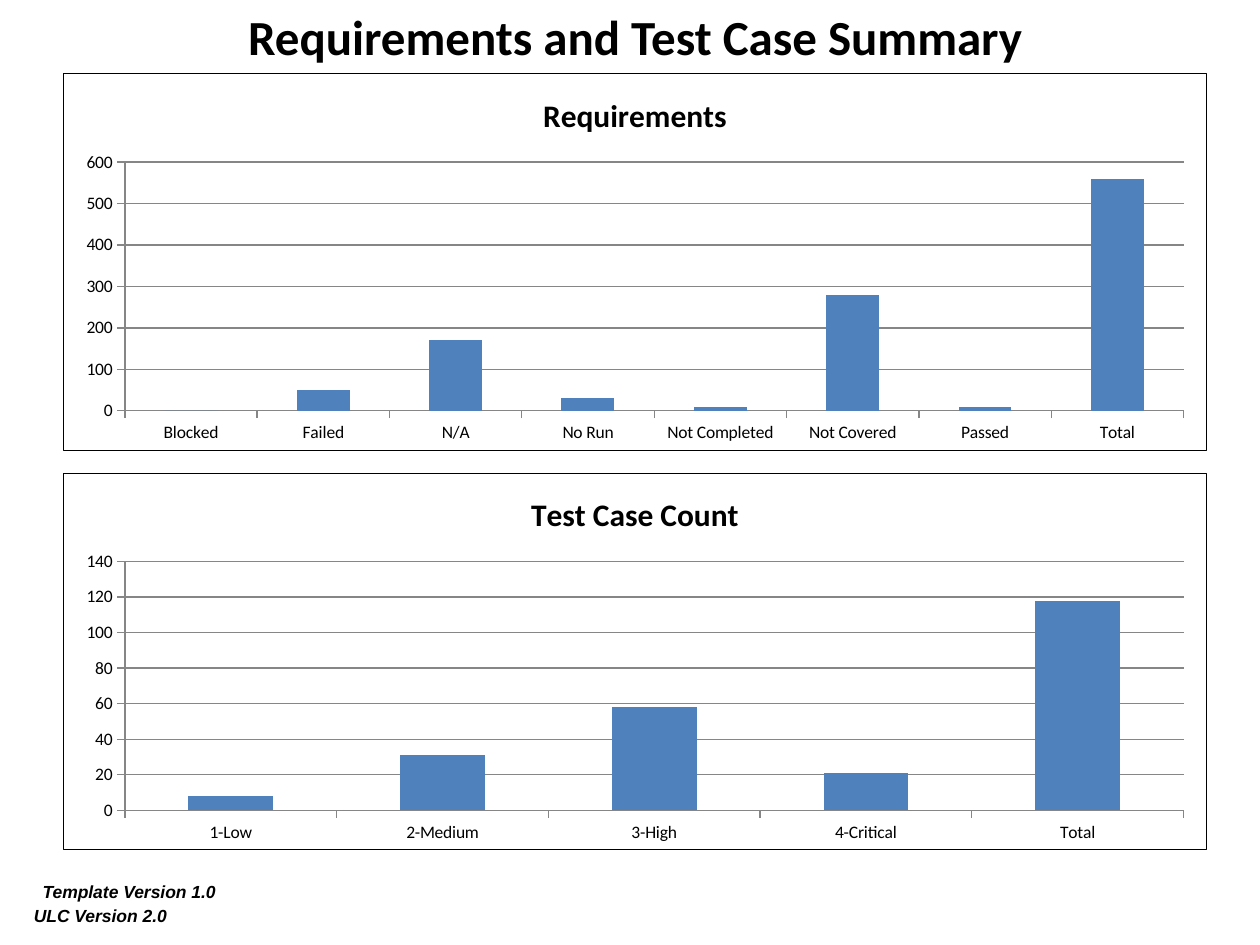
import pptx
import pptx.chart.data
import pptx.dml.color
import pptx.enum.chart
import pptx.enum.text
import pptx.oxml
import pptx.oxml.ns
import pptx.util
from dataclasses import dataclass
from pptx.util import Inches


@dataclass(frozen=True)
class Theme:
    text: str = "000000"
    bar: str = "4F81BD"
    grid: str = "868686"
    heading_font: str = "Calibri"
    note_font: str = "Arial"
    title_size: int = 28
    chart_title_size: int = 18
    label_size: int = 10
    note_size: int = 10
    spacer_size: int = 18
    line_width: float = 0.75


THEME = Theme()

CHARTS = [
    ("Requirements", 600, 100, {
        "Blocked": 0, "Failed": 50, "N/A": 170, "No Run": 30,
        "Not Completed": 10, "Not Covered": 280, "Passed": 10, "Total": 560}),
    ("Test Case Count", 140, 20, {
        "1-Low": 8, "2-Medium": 31, "3-High": 58, "4-Critical": 21, "Total": 118}),
]


def rgb(value):
    return pptx.dml.color.RGBColor.from_string(value)


def set_attrs(obj, values):
    for name, value in values.items():
        setattr(obj, name, value)


def format_font(font, name, size, **values):
    set_attrs(font, {"name": name, "size": pptx.util.Pt(size), **values})
    font.color.rgb = rgb(THEME.text)


def place(sp, box):
    set_attrs(sp, dict(zip(("left", "top", "width", "height"), box)))


def add_title(s, box, text):
    sp = s.shapes.title
    place(sp, box)
    tf = sp.text_frame
    set_attrs(tf, {"word_wrap": True,
                   "auto_size": pptx.enum.text.MSO_AUTO_SIZE.NONE,
                   "vertical_anchor": pptx.enum.text.MSO_ANCHOR.TOP})
    p = tf.paragraphs[0]
    p.alignment = pptx.enum.text.PP_ALIGN.CENTER
    r = p.add_run()
    r.text = text
    format_font(r.font, THEME.heading_font, THEME.title_size, bold=True)


def add_border(chart):
    """Outline the whole chart area, which has no public setting."""
    sp_pr = pptx.oxml.parse_xml(
        f'<c:spPr {pptx.oxml.ns.nsdecls("c", "a")}><a:noFill/>'
        f'<a:ln w="{pptx.util.Pt(THEME.line_width)}"><a:solidFill>'
        f'<a:srgbClr val="{THEME.text}"/></a:solidFill></a:ln></c:spPr>')
    chart.element.find(pptx.oxml.ns.qn("c:chart")).addnext(sp_pr)


def add_count_chart(s, box, title, top_value, step, counts):
    data = pptx.chart.data.CategoryChartData()
    data.categories = list(counts)
    data.add_series("Series 1", list(counts.values()))
    chart = s.shapes.add_chart(
        pptx.enum.chart.XL_CHART_TYPE.COLUMN_CLUSTERED, *box, data).chart
    format_font(chart.font, THEME.heading_font, THEME.label_size)
    set_attrs(chart, {"has_legend": False, "has_title": True})
    add_border(chart)

    r = chart.chart_title.text_frame.paragraphs[0].add_run()
    r.text = title
    format_font(r.font, THEME.heading_font, THEME.chart_title_size, bold=True)

    plot = chart.plots[0]
    set_attrs(plot, {"gap_width": 150, "vary_by_categories": False})
    fill = plot.series[0].format.fill
    fill.solid()
    fill.fore_color.rgb = rgb(THEME.bar)

    value_axis, category_axis = chart.value_axis, chart.category_axis
    set_attrs(value_axis, {"minimum_scale": 0, "maximum_scale": top_value,
                           "major_unit": step, "has_major_gridlines": True})
    for axis in (value_axis, category_axis):
        axis.major_tick_mark = pptx.enum.chart.XL_TICK_MARK.OUTSIDE
    for part in (value_axis, category_axis, value_axis.major_gridlines):
        part.format.line.color.rgb = rgb(THEME.grid)
        part.format.line.width = pptx.util.Pt(THEME.line_width)


def add_versions(s, box):
    tf = s.shapes.add_textbox(*box).text_frame
    set_attrs(tf, {"word_wrap": True,
                   "auto_size": pptx.enum.text.MSO_AUTO_SIZE.SHAPE_TO_FIT_TEXT})
    lines = [[(" ", THEME.spacer_size), ("Template Version 1.0", THEME.note_size)],
             [("ULC Version 2.0", THEME.note_size)]]
    for i, runs in enumerate(lines):
        p = tf.add_paragraph() if i else tf.paragraphs[0]
        for text, size in runs:
            r = p.add_run()
            r.text = text
            format_font(r.font, THEME.note_font, size, bold=True, italic=True)


def main():
    prs = pptx.Presentation()
    set_attrs(prs, {"slide_width": Inches(10), "slide_height": Inches(7.5)})
    s = prs.slides.add_slide(prs.slide_layouts.get_by_name("Title Only"))

    left, width = Inches(0.5), Inches(9.08)
    add_title(s, (left, 0, width, Inches(0.5)), "Requirements and Test Case Summary")
    top, height, gap = Inches(0.58), Inches(3), Inches(0.17)
    for i, chart in enumerate(CHARTS):
        add_count_chart(s, (left, top + i * (height + gap), width, height), *chart)
    add_versions(s, (Inches(0.17), Inches(6.83), Inches(6.75), Inches(0.57)))
    prs.save("out.pptx")


if __name__ == "__main__":
    main()
